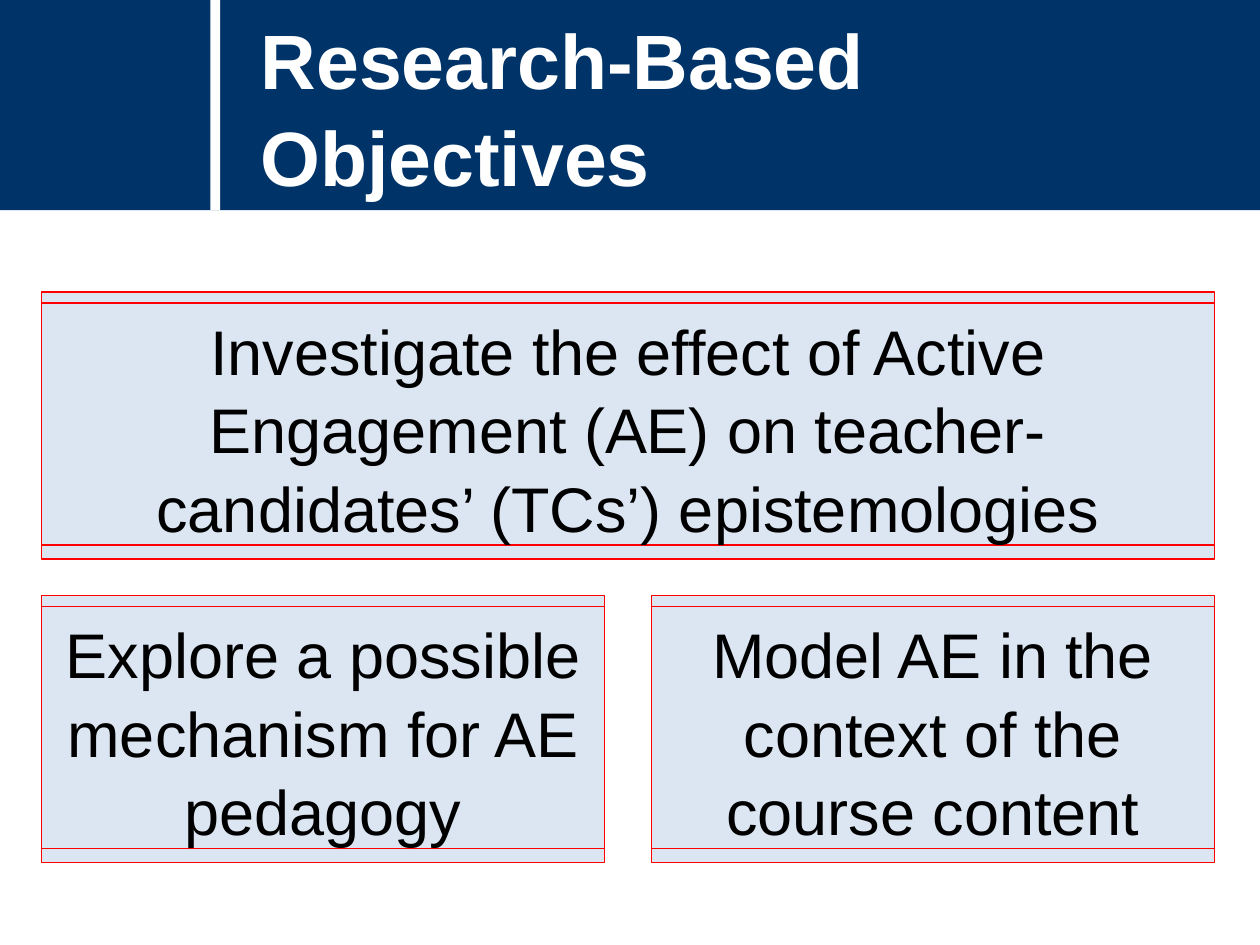
"""Build the Research-Based Objectives slide."""
import pptx
import pptx.util
import pptx.dml.color
import pptx.enum.shapes
import pptx.enum.text

Cm = pptx.util.Cm
Pt = pptx.util.Pt
ANCHOR = pptx.enum.text.MSO_ANCHOR
ALIGN = pptx.enum.text.PP_ALIGN

TITLE = "Research-Based Objectives"
OBJECTIVES = [
    {"row": 1, "col": 1, "span": 1,
     "lines": ["Model AE in the context of the", "course content"]},
    {"row": 1, "col": 0, "span": 1,
     "lines": ["Explore a possible mechanism for AE pedagogy"]},
    {"row": 0, "col": 0, "span": 2,
     "lines": ["Investigate the effect of Active Engagement (AE) on "
               "teacher-candidates’ (TCs’) epistemologies"]},
]
COLORS = {"navy": "003468", "white": "FFFFFF", "pale": "DCE6F2",
          "red": "FF0000", "black": "000000"}

LEFT, TOP = 0.84, 5.89
COL_W, COL_GAP = 11.35, 0.94
ROW_H, ROW_GAP = 5.38, 0.74
INSET, TEXT_H = 0.22, 4.88
BAND_H = 4.24


def rgb(name):
    return pptx.dml.color.RGBColor.from_string(COLORS[name])


def add_rect(shapes, x, y, w, h, fill, line=None):
    s = shapes.add_shape(pptx.enum.shapes.MSO_SHAPE.RECTANGLE,
                         Cm(x), Cm(y), Cm(w), Cm(h))
    s.shadow.inherit = False
    s.fill.solid()
    s.fill.fore_color.rgb = rgb(fill)
    if line:
        s.line.color.rgb = rgb(line)
        s.line.width = Pt(0.75)
    else:
        s.line.fill.background()
    return s


def write(s, lines, size, color, bold=False, align=ALIGN.LEFT,
          anchor=ANCHOR.TOP, spacing=1.04):
    tf = s.text_frame
    tf.word_wrap = True
    tf.auto_size = pptx.enum.text.MSO_AUTO_SIZE.NONE
    tf.vertical_anchor = anchor
    for i, text in enumerate(lines):
        p = tf.add_paragraph() if i else tf.paragraphs[0]
        p.alignment = align
        p.line_spacing = spacing
        p.space_before = p.space_after = Pt(0)
        r = p.add_run()
        r.text = text
        r.font.name = "Arial"
        r.font.size = Pt(size)
        r.font.bold = bold
        r.font.color.rgb = rgb(color)


def add_header(slide):
    band = slide.shapes.add_group_shape()
    add_rect(band.shapes, 0, 0, 25.4, BAND_H, "navy")
    add_rect(band.shapes, 4.24, 0, 0.2, BAND_H, "white")
    title = slide.shapes.title
    title.left, title.top = Cm(5), Cm(0.61)
    title.width, title.height = Cm(17.17), Cm(3)
    write(title, [TITLE], 44, "white", bold=True, anchor=ANCHOR.MIDDLE,
          spacing=1.05)
    title.element.addprevious(band.element)


def add_objective(slide, item):
    x = LEFT + item["col"] * (COL_W + COL_GAP)
    y = TOP + item["row"] * (ROW_H + ROW_GAP)
    w = item["span"] * (COL_W + COL_GAP) - COL_GAP
    group = slide.shapes.add_group_shape()
    add_rect(group.shapes, x, y, w, ROW_H, "pale", "red")
    s = add_rect(group.shapes, x, y + INSET, w, TEXT_H, "pale", "red")
    write(s, item["lines"], 36, "black", align=ALIGN.CENTER)


def main():
    prs = pptx.Presentation()
    prs.slide_width, prs.slide_height = Cm(25.4), Cm(19.05)
    slide = prs.slides.add_slide(prs.slide_layouts[5])
    add_header(slide)
    for item in OBJECTIVES:
        add_objective(slide, item)
    prs.save("out.pptx")


if __name__ == "__main__":
    main()
